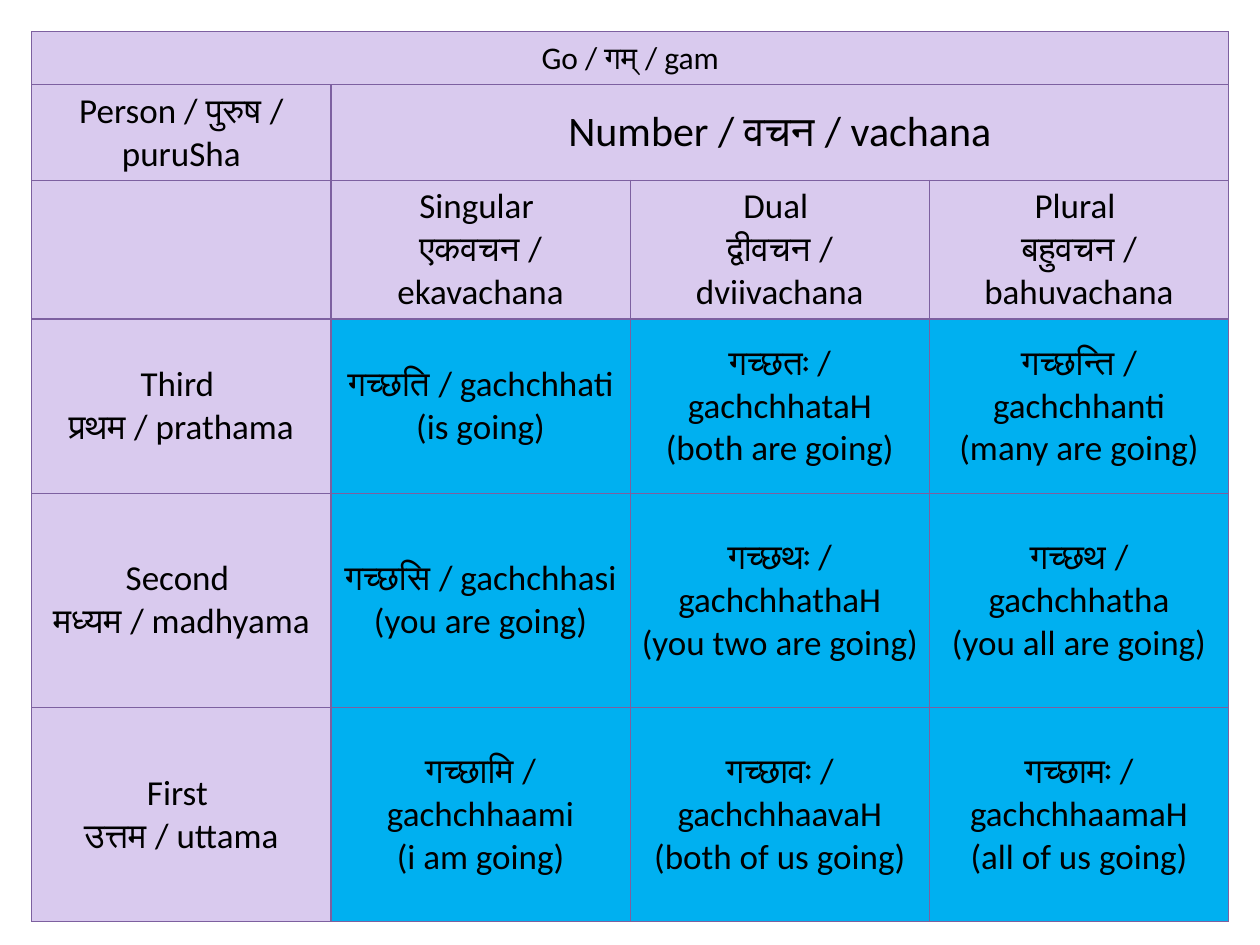
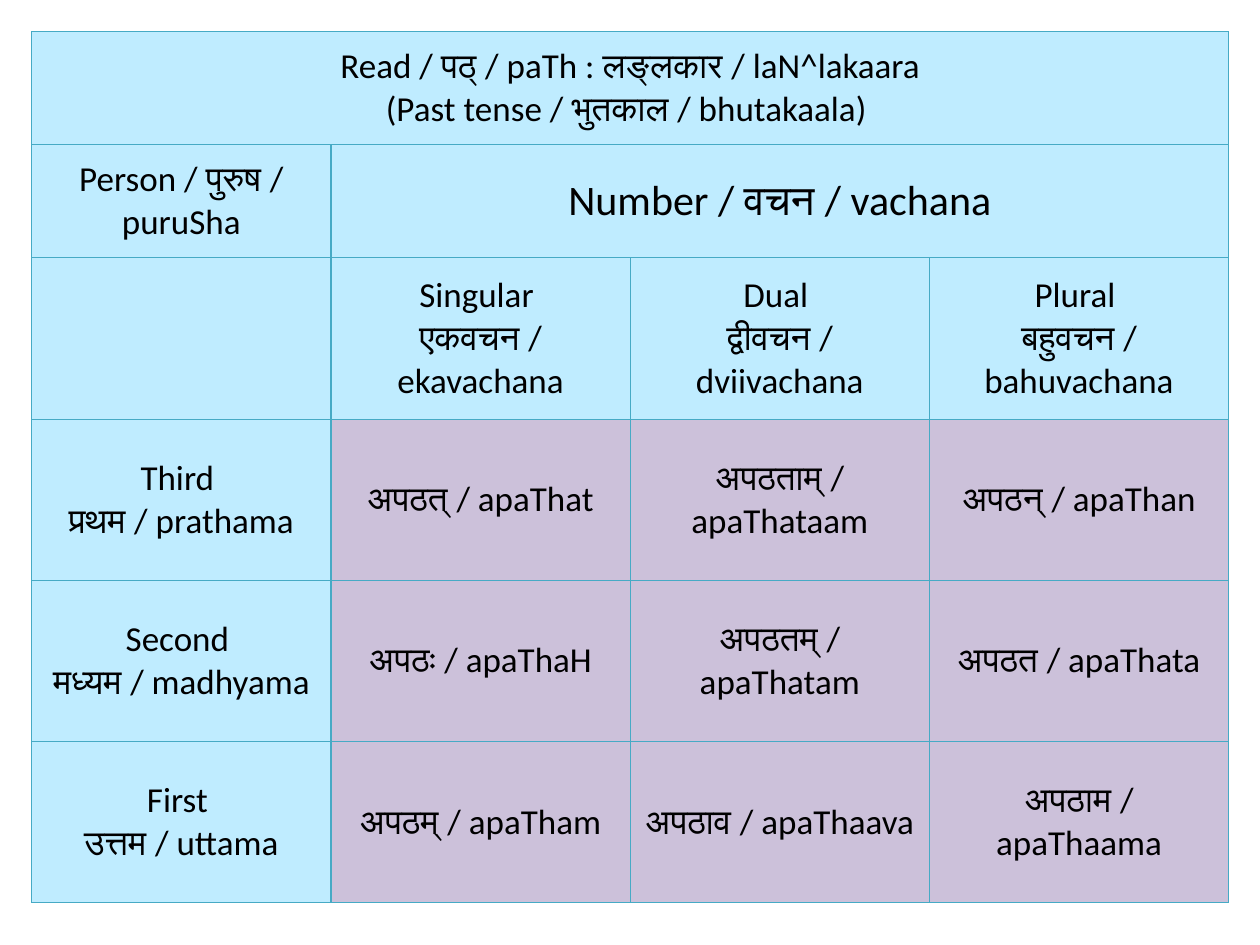
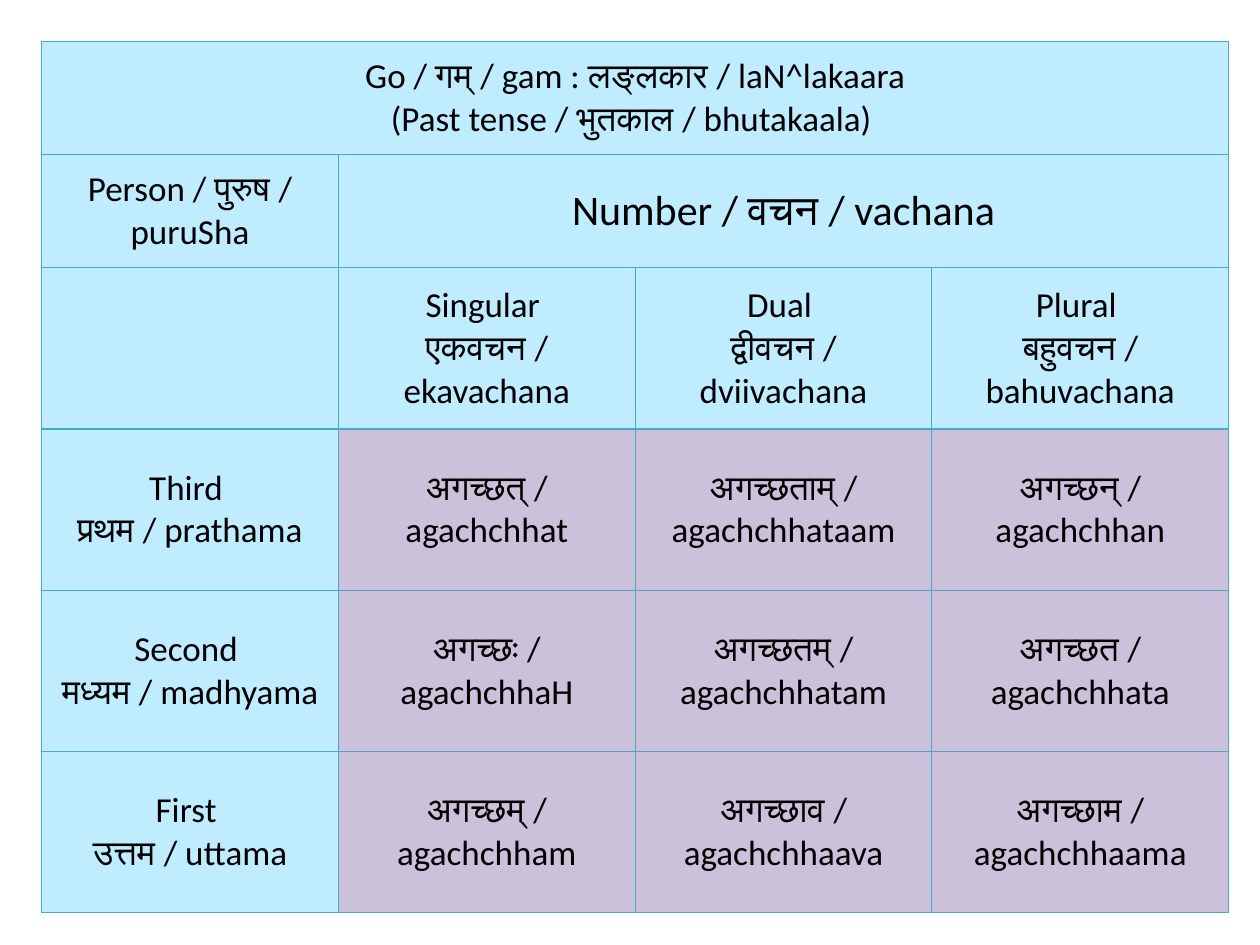
from dataclasses import dataclass

from lxml import etree
from pptx import Presentation
from pptx.dml.color import RGBColor
from pptx.enum.text import MSO_ANCHOR, PP_ALIGN
from pptx.oxml.ns import qn
from pptx.util import Cm, Pt

CENTER = PP_ALIGN.CENTER
MIDDLE = MSO_ANCHOR.MIDDLE


@dataclass(frozen=True)
class Palette:
    heading: str
    form: str
    border: str


@dataclass(frozen=True)
class Theme:
    font: str = "Calibri"
    text: str = "000000"
    small: int = 18
    body: int = 20
    large: int = 24
    border_width: float = 0.75
    present: Palette = Palette("D9CAEE", "00B0F0", "7D60A0")
    past: Palette = Palette("BFECFF", "CCC1DA", "46AAC5")


@dataclass(frozen=True)
class VerbTable:
    title: str
    title_size: int
    palette: Palette
    offset: float
    width: float
    rows: tuple[float, ...]
    side_inset: float
    forms: tuple[tuple[str, str, str], ...]


THEME = Theme()
PERSON = "Person / पुरुष / puruSha"
NUMBER = "Number / वचन / vachana"
NUMBERS = (
    "Singular \nएकवचन / ekavachana",
    "Dual \nद्वीवचन / dviivachana",
    "Plural \nबहुवचन / bahuvachana",
)
PERSONS = (
    "Third \nप्रथम / prathama",
    "Second \nमध्यम / madhyama",
    "First \nउत्तम / uttama",
)
PAST_TENSE = "लङ्लकार / laN^lakaara\n(Past tense / भुतकाल / bhutakaala) "
PAST_ROWS = (2.28,) * 2 + (3.25,) * 4

VERB_TABLES = (
    VerbTable(
        "Go / गम् / gam", THEME.small, THEME.present, 0.64, 24.13,
        (1.07, 1.89, 2.69, 3.51, 4.32, 4.32), 0.18,
        (
            ("गच्छति / gachchhati\n(is going)",
             "गच्छतः / gachchhataH\n(both are going)",
             "गच्छन्ति / gachchhanti\n(many are going)"),
            ("गच्छसि / gachchhasi\n(you are going)",
             "गच्छथः / gachchhathaH\n(you two are going)",
             "गच्छथ / gachchhatha\n(you all are going)"),
            ("गच्छामि / gachchhaami\n(i am going)",
             "गच्छावः / gachchhaavaH\n(both of us going)",
             "गच्छामः / gachchhaamaH\n(all of us going)"),
        ),
    ),
    VerbTable(
        f"Read / पठ् / paTh : {PAST_TENSE}", THEME.body, THEME.past, 0.64, 24.13,
        PAST_ROWS, 0.2,
        (
            ("अपठत् / apaThat", "अपठताम् / apaThataam", "अपठन् / apaThan"),
            ("अपठः / apaThaH", "अपठतम् / apaThatam", "अपठत / apaThata"),
            ("अपठम् / apaTham", "अपठाव / apaThaava", "अपठाम / apaThaama"),
        ),
    ),
    VerbTable(
        f"Go / गम् / gam : {PAST_TENSE}", THEME.body, THEME.past, 0.84, 23.93,
        PAST_ROWS, 0.2,
        (
            ("अगच्छत् / agachchhat", "अगच्छताम् / agachchhataam", "अगच्छन् / agachchhan"),
            ("अगच्छः / agachchhaH", "अगच्छतम् / agachchhatam", "अगच्छत / agachchhata"),
            ("अगच्छम् / agachchham", "अगच्छाव / agachchhaava", "अगच्छाम / agachchhaama"),
        ),
    ),
)


def set_attributes(target, values: dict) -> None:
    for name, value in values.items():
        setattr(target, name, value)


def set_borders(cell, color: str) -> None:
    tc_pr = cell._tc.get_or_add_tcPr()
    for index, side in enumerate(("lnL", "lnR", "lnT", "lnB")):
        ln = etree.Element(qn(f"a:{side}"), w=str(Pt(THEME.border_width)))
        fill = etree.SubElement(ln, qn("a:solidFill"))
        etree.SubElement(fill, qn("a:srgbClr"), val=color)
        tc_pr.insert(index, ln)


def format_cell(cell, text: str, size: int, fill: str, verb: VerbTable) -> None:
    set_attributes(cell, {
        "vertical_anchor": MIDDLE,
        "margin_left": Cm(verb.side_inset),
        "margin_right": Cm(verb.side_inset),
        "margin_top": Cm(0.1),
        "margin_bottom": Cm(0.1),
    })
    cell.fill.solid()
    cell.fill.fore_color.rgb = RGBColor.from_string(fill)
    set_borders(cell, verb.palette.border)
    p = cell.text_frame.paragraphs[0]
    p.text = text
    p.alignment = CENTER
    for r in p.runs:
        set_attributes(r.font, {"name": THEME.font, "size": Pt(size)})
        r.font.color.rgb = RGBColor.from_string(THEME.text)


def draw_verb_table(s, verb: VerbTable) -> None:
    grid = [
        (verb.title, "", "", ""),
        (PERSON, NUMBER, "", ""),
        ("", *NUMBERS),
        *((person, *forms) for person, forms in zip(PERSONS, verb.forms)),
    ]
    sizes = {(0, 0): verb.title_size, (1, 1): THEME.large}
    tbl = s.shapes.add_table(
        len(grid), len(grid[0]), Cm(verb.offset), Cm(verb.offset),
        Cm(verb.width), Cm(sum(verb.rows)),
    ).table
    set_attributes(tbl, {"first_row": False, "horz_banding": False})
    for row, height in zip(tbl.rows, verb.rows):
        row.height = Cm(height)
    for i, texts in enumerate(grid):
        for j, text in enumerate(texts):
            fill = verb.palette.form if i > 2 and j > 0 else verb.palette.heading
            format_cell(tbl.cell(i, j), text, sizes.get((i, j), THEME.body), fill, verb)
    tbl.cell(0, 0).merge(tbl.cell(0, 3))
    tbl.cell(1, 1).merge(tbl.cell(1, 3))


def main() -> None:
    prs = Presentation()
    set_attributes(prs, {"slide_width": Cm(25.4), "slide_height": Cm(19.05)})
    for verb in VERB_TABLES:
        s = prs.slides.add_slide(prs.slide_layouts[6])
        draw_verb_table(s, verb)
    prs.save("out.pptx")


if __name__ == "__main__":
    main()
